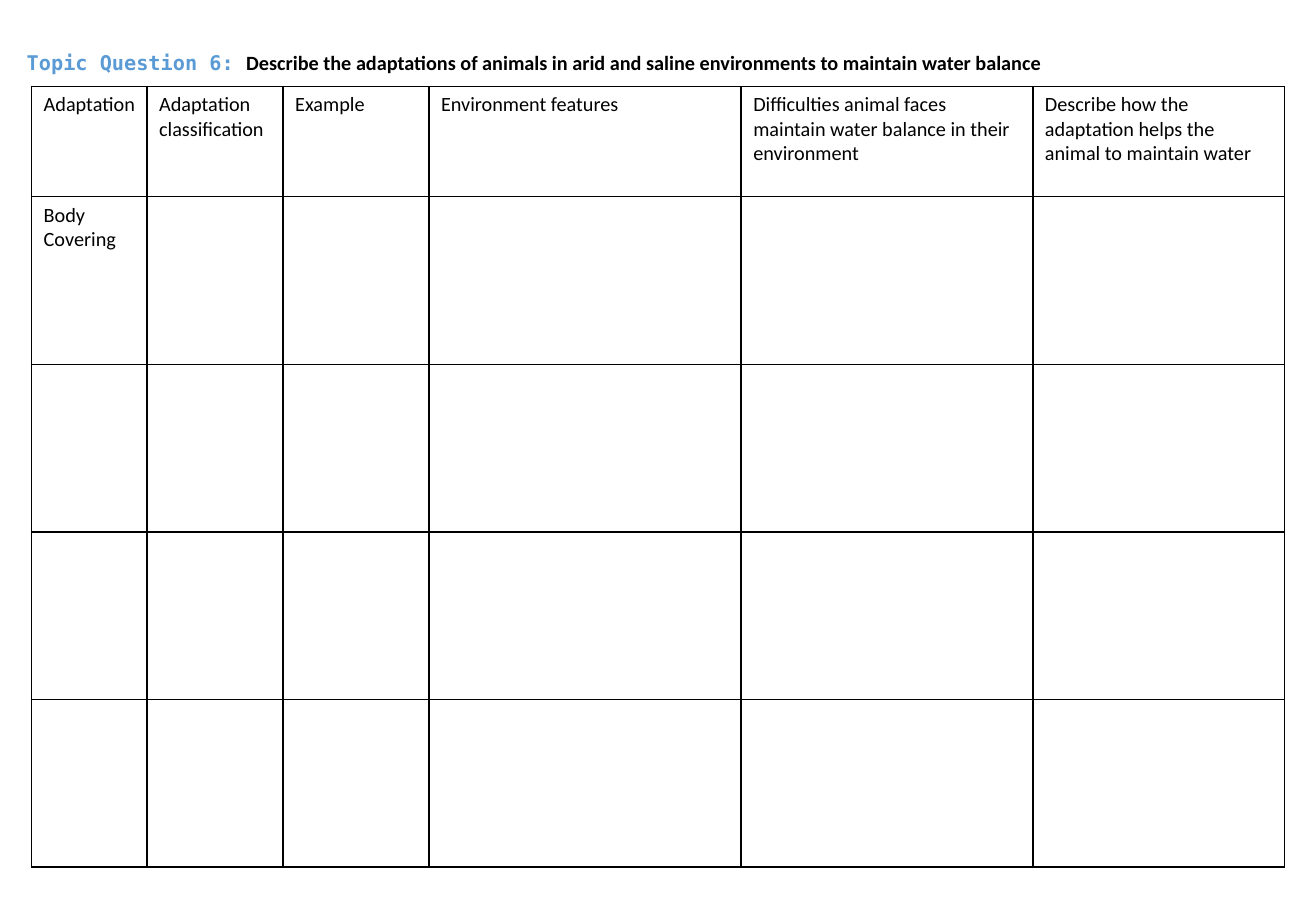
import pptx
import pptx.dml.color
import pptx.enum.text
import pptx.oxml
import pptx.oxml.ns
import pptx.util

Inches, Pt = pptx.util.Inches, pptx.util.Pt
RGBColor = pptx.dml.color.RGBColor
BLACK = RGBColor(0x00, 0x00, 0x00)
BLUE = RGBColor(0x5B, 0x9B, 0xD5)

COL_WIDTHS = [0.95, 1.12, 1.2, 2.57, 2.4, 2.07]
ROW_HEIGHTS = [0.91] + [1.38] * 4
ROW_TEXTS = [
    ["Adaptation", "Adaptation classification", "Example", "Environment features",
     "Difficulties animal faces maintain water balance in their environment",
     "Describe how the adaptation helps the animal to maintain water"],
    ["Body Covering"],
]


def add_run(p, text, font, color, bold):
    r = p.add_run()
    r.text = text
    r.font.name = font
    r.font.size = Pt(12)
    r.font.bold = bold
    r.font.color.rgb = color


def set_borders(cell):
    """Give all four sides of the cell a black 1 pt line."""
    tc_pr = cell._tc.get_or_add_tcPr()
    for i, side in enumerate(("lnL", "lnR", "lnT", "lnB")):
        tc_pr.insert(i, pptx.oxml.parse_xml(
            f'<a:{side} {pptx.oxml.ns.nsdecls("a")} w="{Pt(1)}"><a:solidFill>'
            f'<a:srgbClr val="{BLACK}"/></a:solidFill></a:{side}>'))


prs = pptx.Presentation()
prs.slide_width, prs.slide_height = Inches(10.83), Inches(7.5)
s = prs.slides.add_slide(prs.slide_layouts[5])

title = s.shapes.title
title.left, title.top = Inches(0.12), Inches(0.14)
title.width, title.height = Inches(10.12), Inches(0.75)
tf = title.text_frame
tf.word_wrap = True
tf.auto_size = pptx.enum.text.MSO_AUTO_SIZE.NONE
tf.vertical_anchor = pptx.enum.text.MSO_ANCHOR.MIDDLE
p = tf.paragraphs[0]
p.alignment = pptx.enum.text.PP_ALIGN.LEFT
add_run(p, "Topic Question 6: ", "DejaVu Sans Mono", BLUE, True)
add_run(p, "Describe the adaptations of animals in arid and saline environments "
           "to maintain water balance", "Calibri", BLACK, True)

table = s.shapes.add_table(
    len(ROW_HEIGHTS), len(COL_WIDTHS), Inches(0.26), Inches(0.71),
    Inches(sum(COL_WIDTHS)), Inches(sum(ROW_HEIGHTS))).table
table.first_row = False
table.horz_banding = False
for col, width in zip(table.columns, COL_WIDTHS):
    col.width = Inches(width)
for row, height in zip(table.rows, ROW_HEIGHTS):
    row.height = Inches(height)

for cell in table.iter_cells():
    cell.fill.background()
    cell.margin_right = Inches(0.08)
    set_borders(cell)
for i, texts in enumerate(ROW_TEXTS):
    for j, text in enumerate(texts):
        p = table.cell(i, j).text_frame.paragraphs[0]
        add_run(p, text, "Calibri", BLACK, False)

prs.save("out.pptx")
